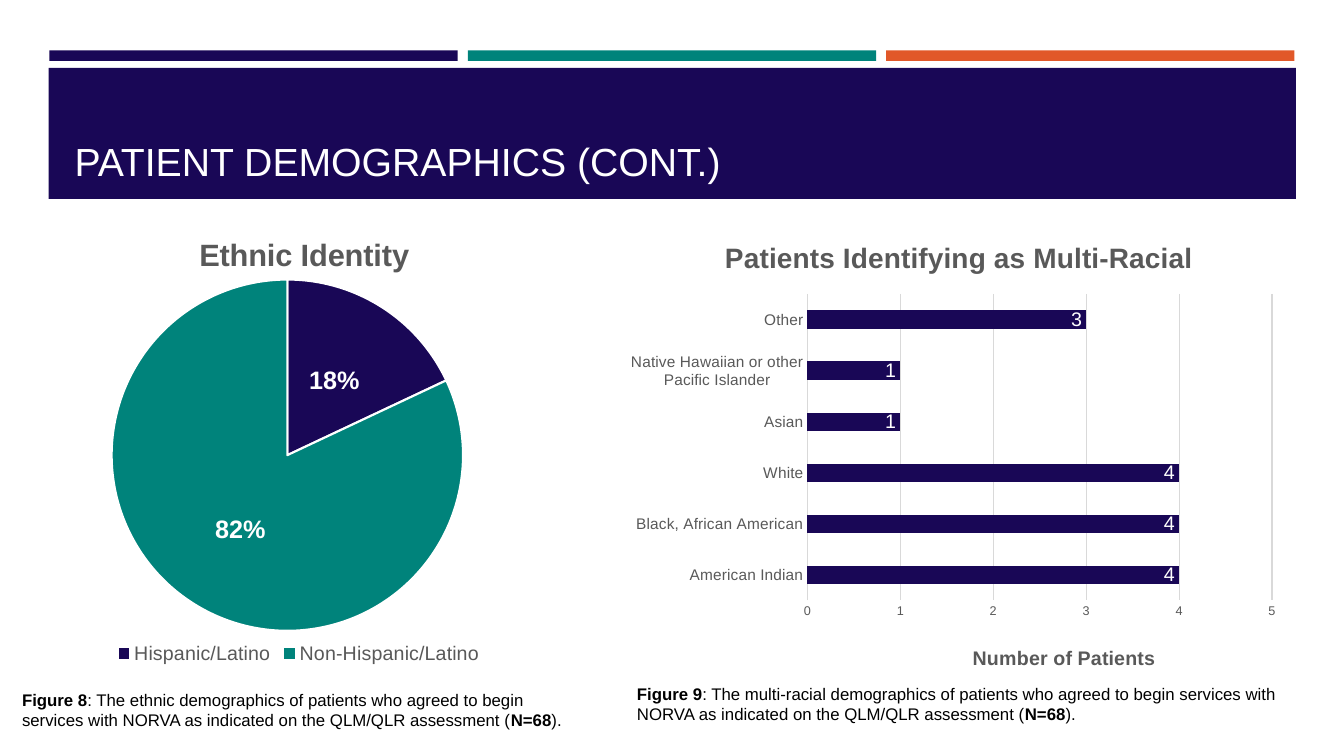
from dataclasses import dataclass

from lxml.etree import SubElement
from pptx import Presentation
from pptx.chart.data import CategoryChartData
from pptx.dml.color import RGBColor
from pptx.enum.chart import XL_CHART_TYPE, XL_LABEL_POSITION, XL_LEGEND_POSITION, XL_TICK_MARK
from pptx.enum.shapes import MSO_SHAPE
from pptx.enum.text import MSO_ANCHOR, MSO_AUTO_SIZE, PP_ALIGN
from pptx.oxml.ns import qn
from pptx.util import Inches, Pt

SLIDE_W, SLIDE_H = Inches(13.33), Inches(7.5)


@dataclass(frozen=True)
class Theme:
    """Colours, font and type sizes of the slide."""
    font: str = "Arial"
    navy: str = "190756"
    teal: str = "00837B"
    orange: str = "E15829"
    white: str = "FFFFFF"
    black: str = "000000"
    grey: str = "595959"
    rule: str = "D9D9D9"
    heading: int = 28
    pie_title: int = 22
    bar_title: int = 20
    pie_label: int = 18
    label: int = 14
    caption: int = 12
    category: int = 11
    base: int = 10
    tick: int = 9


THEME = Theme()


def box(x, y, w, h):
    """Turn percentages of the slide into left, top, width and height."""
    return [round(v * side / 100) for v, side in zip((x, y, w, h), (SLIDE_W, SLIDE_H) * 2)]


def style(font, size, color, bold=False):
    """Format any font object."""
    font.name, font.size, font.bold = THEME.font, Pt(size), bold
    font.color.rgb = RGBColor.from_string(color)


def write(tf, *parts, size, color, bold=False):
    """Write one paragraph; every second part has the opposite weight."""
    p = tf.paragraphs[0]
    p.alignment = PP_ALIGN.LEFT
    for i, text in enumerate(parts):
        r = p.add_run()
        r.text = text
        style(r.font, size, color, bold != bool(i % 2))


def paint(fmt, color):
    """Fill a shape or chart element with one colour."""
    fmt.fill.solid()
    fmt.fill.fore_color.rgb = RGBColor.from_string(color)


def add_bar(slide, color, *place):
    """Add a plain rectangle."""
    sp = slide.shapes.add_shape(MSO_SHAPE.RECTANGLE, *box(*place))
    sp.shadow.inherit = False
    paint(sp, color)
    sp.line.fill.background()


def add_title(slide, text, *place):
    """Place the title over the banner."""
    sp = slide.shapes.title
    sp.left, sp.top, sp.width, sp.height = box(*place)
    slide.shapes._spTree.append(sp._element)
    tf = sp.text_frame
    tf.vertical_anchor = MSO_ANCHOR.BOTTOM
    tf.auto_size = MSO_AUTO_SIZE.NONE
    write(tf, text, size=THEME.heading, color=THEME.white)


def add_caption(slide, figure, text, *place):
    """Add a figure caption with its bold number and sample size."""
    tf = slide.shapes.add_textbox(*box(*place)).text_frame
    tf.word_wrap = True
    tf.auto_size = MSO_AUTO_SIZE.SHAPE_TO_FIT_TEXT
    write(tf, figure, text, "N=68", ").", size=THEME.caption, color=THEME.black, bold=True)


def set_layout(element, **shares):
    """Fix a chart part at shares of the chart's size."""
    for old in element.findall(qn("c:layout")):
        element.remove(old)
    layout = SubElement(element, qn("c:layout"))
    leads = [child for child in element if child.tag in (qn("c:tx"), qn("c:legendPos"))]
    element.insert(len(leads), layout)
    manual = SubElement(layout, qn("c:manualLayout"))
    if "w" in shares:
        SubElement(manual, qn("c:layoutTarget")).set("val", "inner")
    for key in ("x", "y"):
        SubElement(manual, qn(f"c:{key}Mode")).set("val", "edge")
    for key, value in shares.items():
        SubElement(manual, qn(f"c:{key}")).set("val", str(value))


def set_chart_title(title, text, size, x, y):
    """Write a chart or axis title at its place."""
    write(title.text_frame, text, size=size, color=THEME.grey, bold=True)
    set_layout(title._element, x=x, y=y)


def add_chart(slide, kind, values, plot_area, *place):
    """Add a one-series chart and return it."""
    data = CategoryChartData()
    data.categories = list(values)
    data.add_series("Series 1", list(values.values()))
    chart = slide.shapes.add_chart(kind, *box(*place), data).chart
    style(chart.font, THEME.base, THEME.black)
    x, y, w, h = plot_area
    set_layout(chart._chartSpace.chart.plotArea, x=x, y=y, w=w, h=h)
    return chart


def set_labels(plot, position, size, bold=False):
    """Show white data labels and return them."""
    plot.has_data_labels = True
    labels = plot.data_labels
    labels.position = position
    style(labels.font, size, THEME.white, bold)
    return labels


def add_ethnicity_pie(slide):
    """Add the pie of ethnic identity."""
    chart = add_chart(slide, XL_CHART_TYPE.PIE, {"Hispanic/Latino": 18, "Non-Hispanic/Latino": 82},
                      (0.17, 0.13, 0.6, 0.76), 0.9, 28.53, 43.58, 62.13)
    set_chart_title(chart.chart_title, "Ethnic Identity", THEME.pie_title, 0.31, 0.03)
    chart.has_legend = True
    chart.legend.position = XL_LEGEND_POSITION.BOTTOM
    chart.legend.include_in_layout = False
    style(chart.legend.font, THEME.label, THEME.grey)
    set_layout(chart.legend._element, x=0.17, y=0.9)
    plot = chart.plots[0]
    labels = set_labels(plot, XL_LABEL_POSITION.CENTER, THEME.pie_label, True)
    labels.show_percentage, labels.show_value = True, False
    labels.number_format, labels.number_format_is_linked = "0%", False
    for i, color in enumerate((THEME.navy, THEME.teal)):
        fmt = plot.series[0].points[i].format
        paint(fmt, color)
        fmt.line.color.rgb = RGBColor.from_string(THEME.white)
        fmt.line.width = Pt(1.5)


def add_race_bars(slide):
    """Add the bars of multi-racial patients."""
    values = {"American Indian": 4, "Black, African American": 4, "White": 4, "Asian": 1,
              "Native Hawaiian or other Pacific Islander": 1, "Other": 3}
    chart = add_chart(slide, XL_CHART_TYPE.BAR_CLUSTERED, values,
                      (0.28, 0.16, 0.69, 0.67), 46.05, 29.2, 50.1, 60.53)
    set_chart_title(chart.chart_title, "Patients Identifying as Multi-Racial",
                    THEME.bar_title, 0.15, 0.03)
    chart.has_legend = False
    plot = chart.plots[0]
    plot.gap_width, plot.vary_by_categories = 182, False
    paint(plot.series[0].format, THEME.navy)
    set_labels(plot, XL_LABEL_POSITION.INSIDE_END, THEME.label).show_value = True
    cat, val = chart.category_axis, chart.value_axis
    for axis, size in ((cat, THEME.category), (val, THEME.tick)):
        axis.major_tick_mark = axis.minor_tick_mark = XL_TICK_MARK.NONE
        style(axis.tick_labels.font, size, THEME.grey)
    val.minimum_scale, val.maximum_scale, val.major_unit = 0, 5, 1
    val.has_major_gridlines = True
    val.format.line.fill.background()
    for line in (cat.format.line, val.major_gridlines.format.line):
        line.color.rgb = RGBColor.from_string(THEME.rule)
        line.width = Pt(0.75)
    set_chart_title(val.axis_title, "Number of Patients", THEME.label, 0.52, 0.92)


def main():
    """Build and save the slide."""
    prs = Presentation()
    prs.slide_width, prs.slide_height = SLIDE_W, SLIDE_H
    slide = prs.slides.add_slide(prs.slide_layouts[5])
    for i, color in enumerate((THEME.navy, THEME.teal, THEME.orange)):
        add_bar(slide, color, 3.68 + i * 31.13, 6.67, 30.38, 1.4)
    add_bar(slide, THEME.navy, 3.63, 8.98, 92.8, 17.33)
    add_title(slide, "PATIENT DEMOGRAPHICS (CONT.)", 4.8, 10.27, 90.47, 14.8)
    ending = " demographics of patients who agreed to begin services with NORVA as indicated on the QLM/QLR assessment ("
    add_caption(slide, "Figure 8", ": The ethnic" + ending, 0.9, 90.53, 42.31, 9.47)
    add_caption(slide, "Figure 9", ": The multi-racial" + ending, 46.66, 89.73, 51.16, 10.27)
    add_ethnicity_pie(slide)
    add_race_bars(slide)
    prs.save("out.pptx")


if __name__ == "__main__":
    main()
